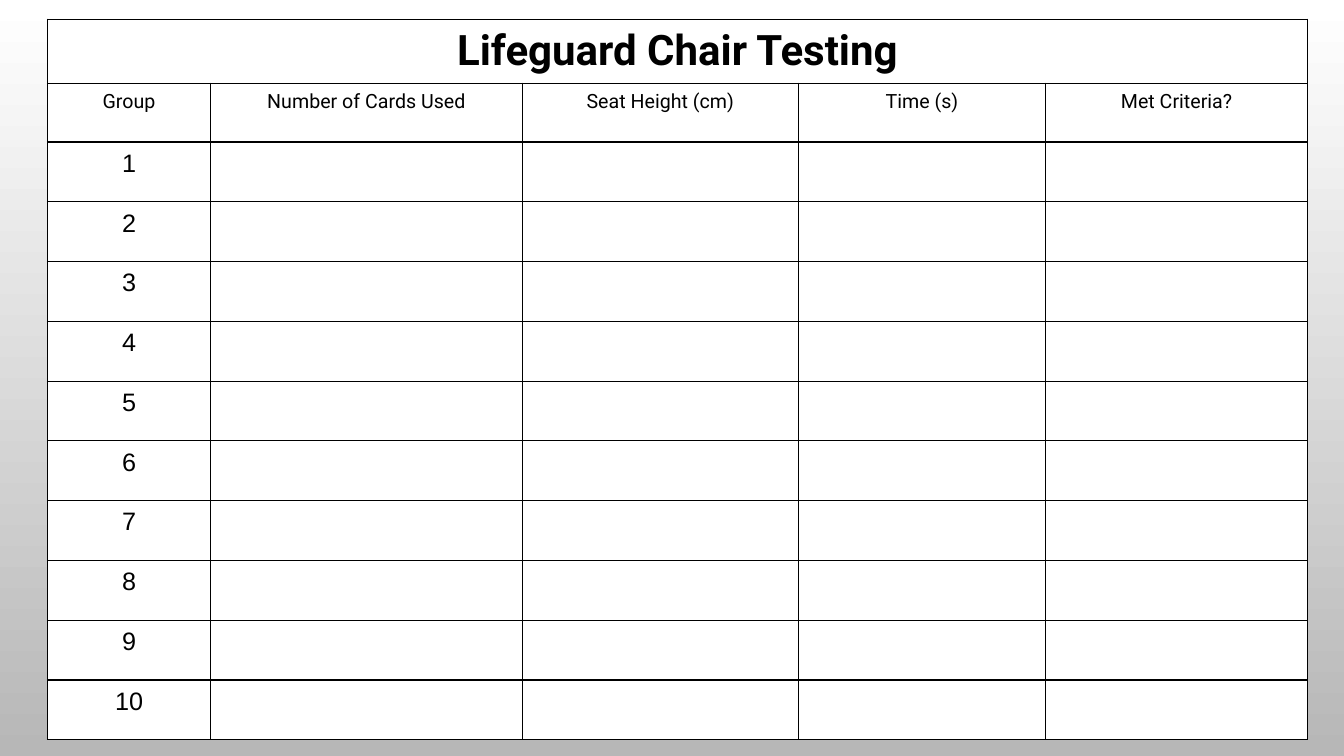
from dataclasses import dataclass

from lxml.etree import SubElement
from pptx import Presentation
from pptx.dml.color import RGBColor as Rgb
from pptx.enum.text import MSO_ANCHOR as Anchor, PP_ALIGN as Align
from pptx.oxml.ns import qn
from pptx.slide import Slide
from pptx.table import Table, _Cell as Cell
from pptx.util import Inches, Length, Pt

WIDE, HIGH = Inches(13.33), Inches(7.5)


@dataclass(frozen=True)
class Style:
    font: str
    size: int
    bold: bool = False


@dataclass(frozen=True)
class Theme:
    ink: str = "000000"
    paper: str = "FFFFFF"
    shade: str = "B7B7B7"
    rule: float = 1
    title: Style = Style("Roboto", 30, True)
    head: Style = Style("Roboto", 14)
    body: Style = Style("Arial", 18)


@dataclass(frozen=True)
class Column:
    label: str
    share: float


@dataclass(frozen=True)
class Row:
    texts: list[str]
    style: Style
    share: float


THEME = Theme()

# Columns and rows, as percent of the slide's width and height
COLUMNS = [
    Column("Group", 12.15),
    Column("Number of Cards Used", 23.18),
    Column("Seat Height (cm)", 20.56),
    Column("Time (s)", 18.38),
    Column("Met Criteria?", 19.5),
]
ROWS = [
    Row(["Lifeguard Chair Testing"], THEME.title, 8.3),
    Row([col.label for col in COLUMNS], THEME.head, 7.8),
    *(Row([str(group)], THEME.body, 7.91) for group in range(1, 11)),
]
LEFT, TOP, INSET = 3.53, 2.53, 0.55


def across(share: float) -> Length:
    return Length(round(WIDE * share / 100))


def down(share: float) -> Length:
    return Length(round(HIGH * share / 100))


def paint_back(slide: Slide) -> None:
    fill = slide.background.fill
    fill.gradient()
    fill.gradient_angle = 270
    for stop, tint, place in zip(fill.gradient_stops, (THEME.paper, THEME.shade), (0, 1)):
        stop.color.rgb = Rgb.from_string(tint)
        stop.position = place


def rule_cell(cell: Cell) -> None:
    props = cell._tc.get_or_add_tcPr()
    for index, side in enumerate(("lnL", "lnR", "lnT", "lnB")):
        line = SubElement(props, qn(f"a:{side}"), w=str(Pt(THEME.rule)))
        fill = SubElement(line, qn("a:solidFill"))
        SubElement(fill, qn("a:srgbClr"), val=THEME.ink)
        props.insert(index, line)  # borders come before the fill


def fill_cell(cell: Cell, text: str, style: Style) -> None:
    cell.fill.solid()
    cell.fill.fore_color.rgb = Rgb.from_string(THEME.paper)
    cell.vertical_anchor = Anchor.TOP
    cell.margin_left = cell.margin_right = across(INSET)
    cell.margin_top = cell.margin_bottom = across(INSET)
    rule_cell(cell)
    cell.text = text
    para = cell.text_frame.paragraphs[0]
    para.alignment = Align.CENTER
    font = para.font
    for run in para.runs:
        font = run.font
    font.name, font.size, font.bold = style.font, Pt(style.size), style.bold
    font.color.rgb = Rgb.from_string(THEME.ink)


def add_grid(slide: Slide) -> Table:
    width = across(sum(col.share for col in COLUMNS))
    height = down(sum(row.share for row in ROWS))
    frame = slide.shapes.add_table(
        len(ROWS), len(COLUMNS), across(LEFT), down(TOP), width, height)
    table = frame.table
    table.first_row = table.horz_banding = False
    for slot, col in zip(table.columns, COLUMNS):
        slot.width = across(col.share)
    for slot, row in zip(table.rows, ROWS):
        slot.height = down(row.share)
        blanks = [""] * (len(COLUMNS) - len(row.texts))
        for cell, text in zip(slot.cells, row.texts + blanks):
            fill_cell(cell, text, row.style)
    return table


def main() -> None:
    deck = Presentation()
    deck.slide_width, deck.slide_height = WIDE, HIGH
    slide = deck.slides.add_slide(deck.slide_layouts[6])
    paint_back(slide)

    # The title row spans every column
    table = add_grid(slide)
    table.cell(0, 0).merge(table.cell(0, len(COLUMNS) - 1))
    deck.save("out.pptx")


if __name__ == "__main__":
    main()
